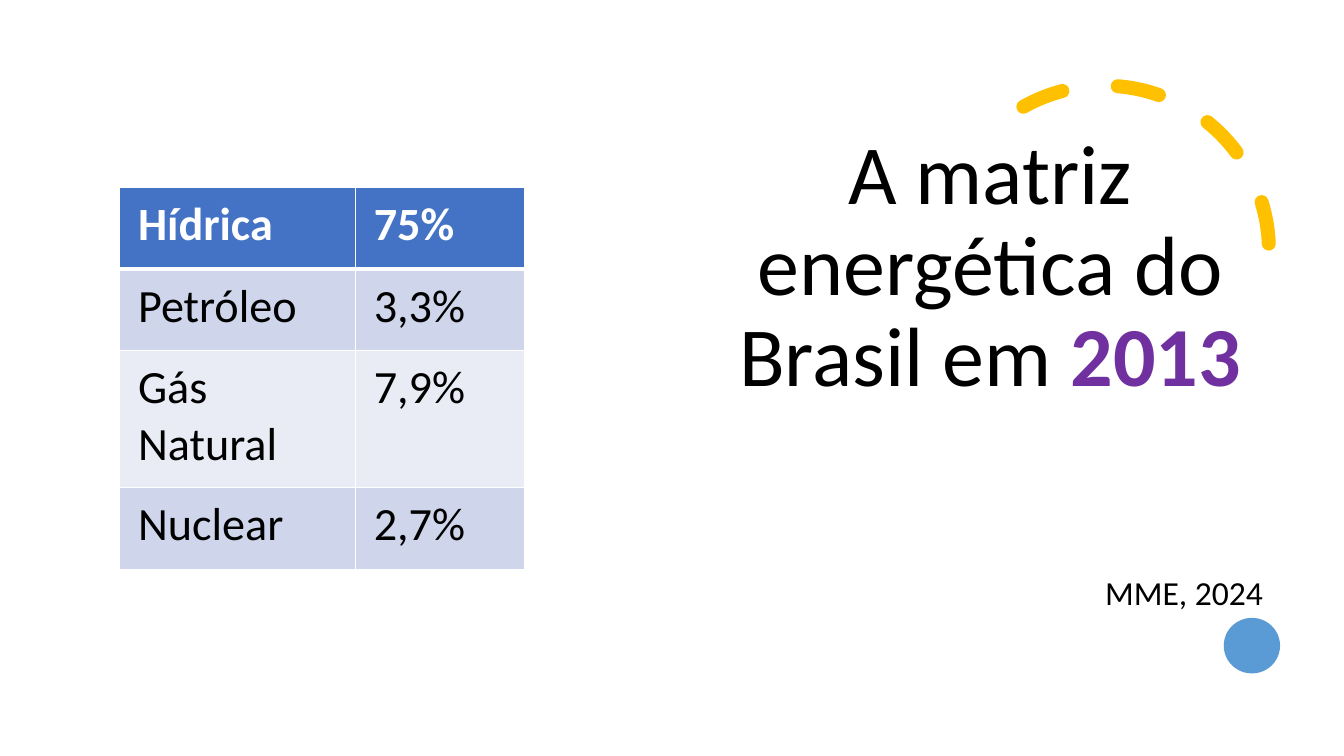
from dataclasses import dataclass

import pptx
import pptx.dml.color
import pptx.enum.dml
import pptx.enum.shapes
import pptx.enum.text
import pptx.oxml
import pptx.oxml.ns
import pptx.util
from pptx.dml.color import RGBColor
from pptx.enum.shapes import MSO_SHAPE
from pptx.enum.text import MSO_ANCHOR, PP_ALIGN
from pptx.util import Cm

FONT = "Calibri"
BLACK = RGBColor(0x00, 0x00, 0x00)
WHITE = RGBColor(0xFF, 0xFF, 0xFF)
GOLD = RGBColor(0xFF, 0xC0, 0x00)
PURPLE = RGBColor(0x70, 0x30, 0xA0)
SKY = RGBColor(0x5B, 0x9B, 0xD5)
BLUE = RGBColor(0x44, 0x72, 0xC4)
BANDS = [RGBColor(0xE9, 0xEB, 0xF5), RGBColor(0xCF, 0xD5, 0xEA)]


@dataclass
class Box:
    left: float
    top: float
    width: float
    height: float

    def place(self) -> tuple[Cm, Cm, Cm, Cm]:
        return Cm(self.left), Cm(self.top), Cm(self.width), Cm(self.height)


@dataclass
class Phrase:
    text: str
    color: RGBColor = BLACK
    bold: bool = False


@dataclass
class Label:
    box: Box
    words: list[Phrase]
    size: int
    align: PP_ALIGN
    anchor: MSO_ANCHOR


@dataclass
class Source:
    name: str
    share: str
    height: float = 2.06


TITLE = Label(
    Box(17.83, 2.67, 14.25, 7.65),
    [Phrase("A matriz energética do Brasil em "), Phrase("2013", PURPLE, True)],
    60, PP_ALIGN.CENTER, MSO_ANCHOR.BOTTOM,
)
CREDIT = Label(
    Box(17.83, 14.41, 14.25, 1.2), [Phrase("MME, 2024")],
    24, PP_ALIGN.RIGHT, MSO_ANCHOR.TOP,
)
MIX = [
    Source("Hídrica", "75%"),
    Source("Petróleo", "3,3%"),
    Source("Gás Natural", "7,9%", 3.45),
    Source("Nuclear", "2,7%"),
]
WIDTHS = [5.94, 4.27]


def style(run, size: int, color: RGBColor, bold: bool) -> None:
    font = run.font
    font.name = FONT
    font.size = pptx.util.Pt(size)
    font.color.rgb = color
    font.bold = bold


def add_label(slide, label: Label) -> None:
    frame = slide.shapes.add_textbox(*label.box.place()).text_frame
    frame.word_wrap = True
    frame.vertical_anchor = label.anchor
    line = frame.paragraphs[0]
    line.alignment = label.align
    line.line_spacing = 0.9
    for phrase in label.words:
        run = line.add_run()
        run.text = phrase.text
        style(run, label.size, phrase.color, phrase.bold)


def add_arc(slide, box: Box) -> None:
    arc = slide.shapes.add_shape(MSO_SHAPE.ARC, *box.place())
    arc.shadow.inherit = False
    arc.adjustments[0] = 144.42
    arc.adjustments[1] = 0
    arc.fill.background()
    arc.line.color.rgb = GOLD
    arc.line.width = pptx.util.Pt(10)
    arc.line.dash_style = pptx.enum.dml.MSO_LINE.DASH
    arc.line._get_or_add_ln().set("cap", "rnd")


def add_dot(slide, box: Box) -> None:
    dot = slide.shapes.add_shape(MSO_SHAPE.OVAL, *box.place())
    dot.shadow.inherit = False
    dot.fill.solid()
    dot.fill.fore_color.rgb = SKY
    dot.line.fill.background()


def add_edge(cell, side: str, points: int) -> None:
    space = pptx.oxml.ns.nsdecls("a")
    edge = pptx.oxml.parse_xml(
        f'<a:ln{side} {space} w="{pptx.util.Pt(points)}"><a:solidFill>'
        f'<a:srgbClr val="{WHITE}"/></a:solidFill></a:ln{side}>'
    )
    cell._tc.get_or_add_tcPr().append(edge)


def fill_cell(cell, text: str, row: int) -> None:
    head = row == 0
    edges = {"L": 1, "R": 1, "T": 3 if row == 1 else 1, "B": 3 if head else 1}
    for side, points in edges.items():
        add_edge(cell, side, points)
    cell.fill.solid()
    cell.fill.fore_color.rgb = BLUE if head else BANDS[row % 2]
    cell.margin_left = cell.margin_right = Cm(0.46)
    cell.margin_top = cell.margin_bottom = Cm(0.23)
    cell.text_frame.text = text
    run = cell.text_frame.paragraphs[0].runs[0]
    style(run, 33, WHITE if head else BLACK, head)


def add_mix(slide, left: float, top: float) -> None:
    box = Box(left, top, sum(WIDTHS), sum(item.height for item in MIX))
    frame = slide.shapes.add_table(len(MIX), len(WIDTHS), *box.place())
    table = frame.table
    for col, width in zip(table.columns, WIDTHS):
        col.width = Cm(width)
    for row, item in enumerate(MIX):
        table.rows[row].height = Cm(item.height)
        for col, text in enumerate((item.name, item.share)):
            fill_cell(table.cell(row, col), text, row)


def main() -> None:
    deck = pptx.Presentation()
    deck.slide_width = Cm(33.87)
    deck.slide_height = Cm(19.05)
    slide = deck.slides.add_slide(deck.slide_layouts[6])
    add_arc(slide, Box(23.67, 2.16, 8.31, 8.31))
    add_label(slide, TITLE)
    add_dot(slide, Box(30.84, 15.57, 1.42, 1.4))
    add_label(slide, CREDIT)
    add_mix(slide, 3.02, 4.72)
    deck.save("out.pptx")


if __name__ == "__main__":
    main()
